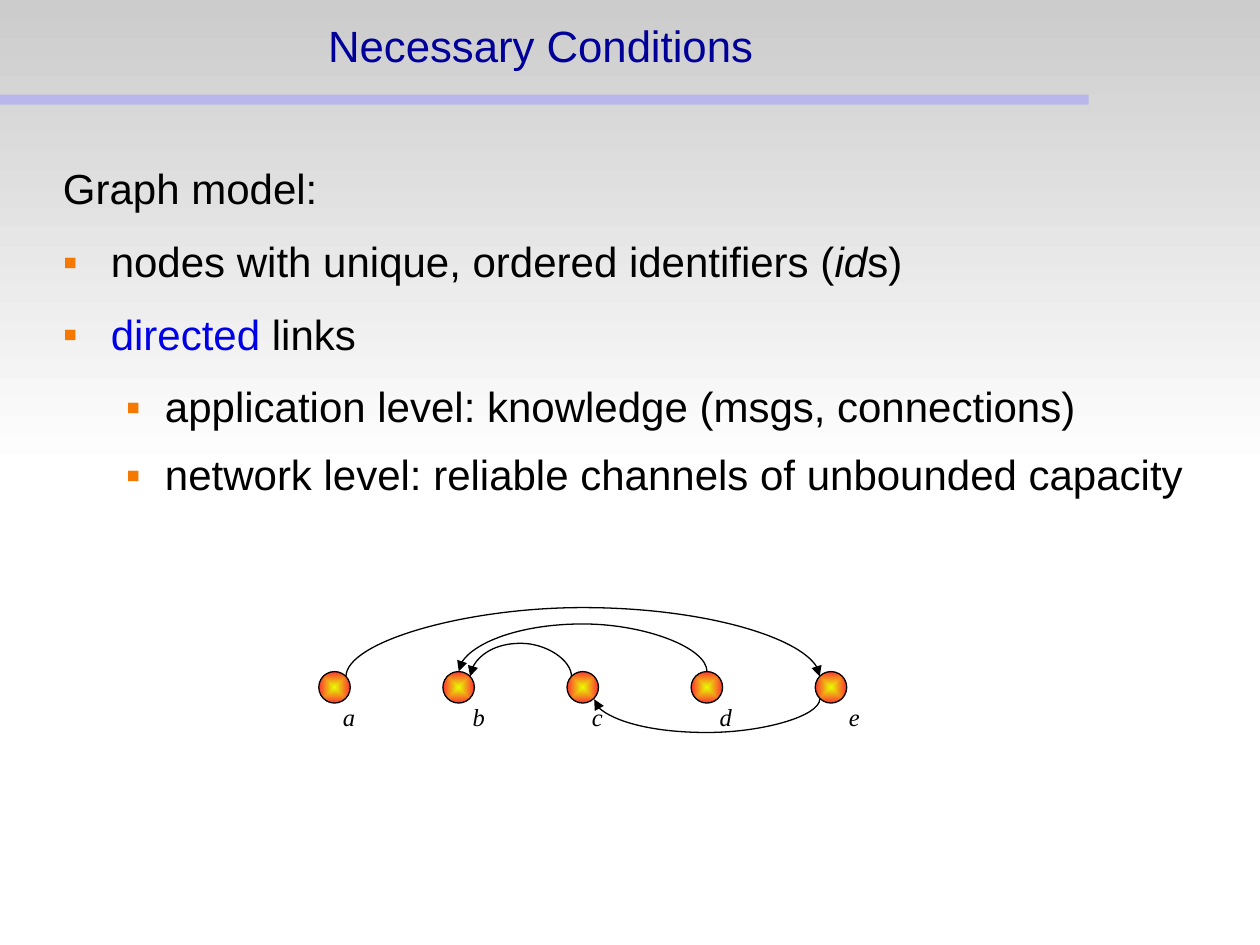
from dataclasses import dataclass
from typing import NamedTuple

from lxml import etree
from pptx import Presentation
from pptx.dml.color import RGBColor
from pptx.enum.shapes import MSO_CONNECTOR, MSO_SHAPE
from pptx.enum.text import MSO_ANCHOR, PP_ALIGN
from pptx.oxml.ns import qn
from pptx.util import Inches, Pt

CURVE = MSO_CONNECTOR.CURVE
RECT, OVAL = MSO_SHAPE.RECTANGLE, MSO_SHAPE.OVAL
MIDDLE = MSO_ANCHOR.MIDDLE
CENTER = PP_ALIGN.CENTER


@dataclass(frozen=True)
class Theme:
    sans: str = "Arial"
    serif: str = "Times New Roman"
    head: str = "000099"
    ink: str = "000000"
    link: str = "0000E7"
    mark: str = "F57900"
    bar: str = "9999FF"
    sky: tuple = ("CCCCCC", "FFFFFF")
    glow: tuple = ("E6FF00", "FF3333")
    head_size: float = 25
    body_size: float = 24
    name_size: float = 14
    line: float = 0.75


class Span(NamedTuple):
    text: str
    color: str
    slant: bool = False


class Item(NamedTuple):
    spans: list
    level: int = 0
    left: float = 0
    hang: float = 0
    after: float = 14.2


class Node(NamedTuple):
    name: str
    label: float


class Arc(NamedTuple):
    start: float
    end: float
    y: float
    bow: float


LOOK = Theme()
FIRST, STEP, SIZE, TOP = 2.53, 0.985, 0.25, 5.33
MID = FIRST + SIZE / 2
EDGE = 0.09
THIN = Pt(0.12)

ITEMS = [
    Item([Span("Graph model:", LOOK.ink)]),
    Item([Span("nodes with unique, ordered identifiers (", LOOK.ink),
          Span("id", LOOK.ink, True), Span("s)", LOOK.ink)], 0, 0.38, 0.38),
    Item([Span("directed ", LOOK.link), Span("links", LOOK.ink)], 0, 0.38, 0.38),
    Item([Span("application level: knowledge (msgs, connections)", LOOK.ink)],
         1, 0.81, 0.31, 11.4),
    Item([Span("network level: reliable channels of unbounded capacity", LOOK.ink)],
         1, 0.81, 0.31, 11.4),
]
NODES = [Node("a", 2.77), Node("b", 3.8), Node("c", 4.74),
         Node("d", 5.76), Node("e", 6.78)]


def node_x(pos: int) -> float:
    return MID + STEP * pos


ARCS = [
    Arc(node_x(0) + EDGE, node_x(4) - EDGE, 5.37, -0.58),
    Arc(node_x(4) - EDGE, node_x(2) + EDGE, 5.55, 0.28),
    Arc(node_x(3), node_x(1), TOP, -0.4),
    Arc(node_x(2) - EDGE, node_x(1) + EDGE, 5.37, -0.28),
]


def rgb(code: str) -> RGBColor:
    return RGBColor.from_string(code)


def add_tag(parent, tag: str, **attrs):
    node = etree.SubElement(parent, qn(tag))
    for key, value in attrs.items():
        node.set(key, str(value))
    return node


def add_run(para, span: Span, face: str, size: float) -> None:
    run = para.add_run()
    run.text = span.text
    run.font.name = face
    run.font.size = Pt(size)
    run.font.italic = span.slant
    run.font.color.rgb = rgb(span.color)


def set_pad(frame, side: float, edge: float) -> None:
    frame.margin_left = frame.margin_right = Inches(side)
    frame.margin_top = frame.margin_bottom = Inches(edge)


def add_shape(slide, kind, x: float, y: float, w: float, h: float):
    shape = slide.shapes.add_shape(kind, Inches(x), Inches(y), Inches(w), Inches(h))
    shape.shadow.inherit = False
    shape.line.fill.background()
    return shape


def set_blend(shape, colors: tuple) -> None:
    shape.fill.gradient()
    for stop, code in zip(shape.fill.gradient_stops, colors):
        stop.color.rgb = rgb(code)


def add_back(slide) -> None:
    sky = add_shape(slide, RECT, 0, 0, 10, 3.75)
    set_blend(sky, LOOK.sky)
    sky.fill.gradient_angle = 270
    bar = add_shape(slide, RECT, 0, 0.75, 8.64, 0.08)
    bar.fill.solid()
    bar.fill.fore_color.rgb = rgb(LOOK.bar)
    add_tag(bar._element.spPr.find(".//" + qn("a:srgbClr")), "a:alpha", val=50000)


def add_title(slide) -> None:
    title = slide.shapes.title
    slide.shapes._spTree.append(title._element)
    title.left, title.top = Inches(0), Inches(0)
    title.width, title.height = Inches(8.58), Inches(0.75)
    frame = title.text_frame
    set_pad(frame, 0, 0)
    frame.word_wrap = True
    frame.vertical_anchor = MIDDLE
    para = frame.paragraphs[0]
    para.alignment = CENTER
    para.line_spacing = 0.98
    add_run(para, Span("Necessary Conditions", LOOK.head), LOOK.sans, LOOK.head_size)


def add_body(slide) -> None:
    box = slide.shapes.add_textbox(Inches(0.5), Inches(1.3), Inches(9), Inches(4.95))
    frame = box.text_frame
    frame.word_wrap = True
    set_pad(frame, 0, 0.02)
    for pos, item in enumerate(ITEMS):
        para = frame.add_paragraph() if pos else frame.paragraphs[0]
        para.level = item.level
        para.line_spacing = 0.95
        para.space_after = Pt(item.after)
        if item.hang:
            props = para._p.get_or_add_pPr()
            props.set("marL", str(Inches(item.left)))
            props.set("indent", str(-Inches(item.hang)))
            add_tag(add_tag(props, "a:buClr"), "a:srgbClr", val=LOOK.mark)
            add_tag(props, "a:buFont", typeface=LOOK.sans)
            add_tag(props, "a:buChar", char="▪")
        for span in item.spans:
            add_run(para, span, LOOK.sans, LOOK.body_size)


def add_label(slide, node: Node) -> None:
    box = slide.shapes.add_textbox(Inches(node.label - 0.15), Inches(5.52),
                                   Inches(0.3), Inches(0.34))
    box.text_frame.word_wrap = False
    para = box.text_frame.paragraphs[0]
    para.alignment = CENTER
    add_run(para, Span(node.name, LOOK.ink, True), LOOK.serif, LOOK.name_size)


def add_node(slide, pos: int) -> None:
    dot = add_shape(slide, OVAL, FIRST + STEP * pos, TOP, SIZE, SIZE)
    set_blend(dot, LOOK.glow)
    grad = dot._element.spPr.find(qn("a:gradFill"))
    grad.remove(grad.find(qn("a:lin")))
    route = add_tag(grad, "a:path", path="shape")
    add_tag(route, "a:fillToRect", l=50000, t=50000, r=50000, b=50000)
    dot.line.color.rgb = rgb(LOOK.ink)
    dot.line.width = Pt(LOOK.line)


def add_arc(slide, arc: Arc) -> None:
    right, up = arc.end > arc.start, arc.bow < 0
    span = abs(arc.end - arc.start)
    x = Inches((arc.start + arc.end) / 2)
    low, high = Inches(arc.y + span / 2), Inches(arc.y - span / 2)
    turn = 270 if up and not right else 90
    ends = (x + THIN, x) if up and right else (x, x + THIN)
    tips = (low, high) if up else (high, low)
    wire = slide.shapes.add_connector(CURVE, ends[0], tips[0], ends[1], tips[1])
    wire.line.color.rgb = rgb(LOOK.ink)
    wire.line.width = Pt(LOOK.line)
    props = wire._element.spPr
    props.find(qn("a:xfrm")).set("rot", str(turn * 60000))
    bend = round(Inches(abs(arc.bow)) / THIN * 100000)
    guides = props.find(qn("a:prstGeom")).find(qn("a:avLst"))
    add_tag(guides, "a:gd", name="adj1", fmla=f"val {bend}")
    add_tag(props.find(qn("a:ln")), "a:tailEnd", type="triangle")
    add_tag(props, "a:effectLst")


def main() -> None:
    deck = Presentation()
    deck.slide_width, deck.slide_height = Inches(10), Inches(7.5)
    slide = deck.slides.add_slide(deck.slide_layouts[5])
    add_back(slide)
    add_title(slide)
    add_body(slide)
    for node in NODES:
        add_label(slide, node)
    for pos in range(len(NODES)):
        add_node(slide, pos)
    for arc in ARCS:
        add_arc(slide, arc)
    deck.save("out.pptx")


if __name__ == "__main__":
    main()
